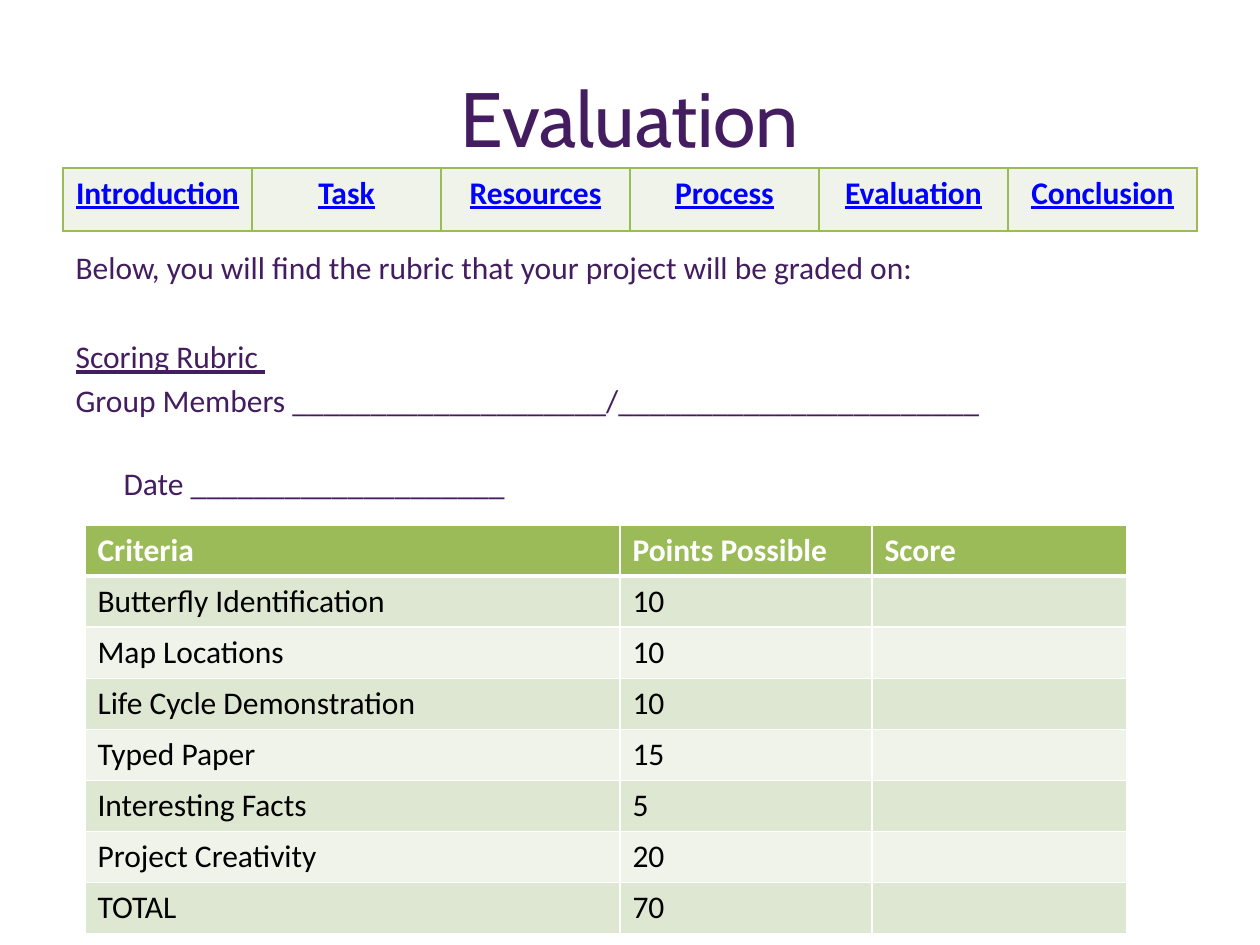
from dataclasses import dataclass

from lxml.etree import SubElement
from pptx import Presentation
from pptx.dml.color import RGBColor
from pptx.enum.text import MSO_ANCHOR, MSO_AUTO_SIZE, PP_ALIGN
from pptx.oxml.ns import qn
from pptx.util import Emu, Pt

EMU_PER_INCH = 914400
PX_PER_INCH = 126
COLORS = {
    "purple": "441D61",
    "link": "0000FF",
    "green": "9BBB59",
    "band": "DEE7D1",
    "pale": "EFF3EA",
    "white": "FFFFFF",
    "black": "000000",
}


@dataclass
class TextStyle:
    color: str
    size: int = 18
    font: str = "Calibri"
    bold: bool = False
    underline: bool = False
    align: PP_ALIGN = PP_ALIGN.LEFT


@dataclass
class BodyLine:
    text: str
    space_before: float = 3.6
    indent: int = 0
    underline: bool = False


@dataclass
class CellLook:
    fill: str
    border: str
    style: TextStyle
    top: int = 1
    bottom: int = 1


@dataclass
class TableBox:
    left: int
    top: int
    columns: list[int]
    row_height: int


BODY_LINES = [
    BodyLine("Below, you will find the rubric that your project will be graded on:", 0),
    BodyLine("Scoring Rubric ", 29.2, underline=True),
    BodyLine("Group Members " + "_" * 20 + "/" + "_" * 23),
    BodyLine("Date " + "_" * 20, 25.6, indent=48),
]
SECTIONS = ["Introduction", "Task", "Resources", "Process", "Evaluation", "Conclusion"]
RUBRIC = [
    ["Criteria", "Points Possible", "Score"],
    ["Butterfly Identification", "10", ""],
    ["Map Locations", "10", ""],
    ["Life Cycle Demonstration", "10", ""],
    ["Typed Paper", "15", ""],
    ["Interesting Facts", "5", ""],
    ["Project Creativity", "20", ""],
    ["TOTAL", "70", ""],
]


def px(length: int) -> Emu:
    return Emu(round(length * EMU_PER_INCH / PX_PER_INCH))


def color(name: str) -> RGBColor:
    return RGBColor.from_string(COLORS[name])


def place(shape, left: int, top: int, width: int, height: int) -> None:
    shape.left, shape.top = px(left), px(top)
    shape.width, shape.height = px(width), px(height)


def format_paragraph(paragraph, style: TextStyle) -> None:
    paragraph.alignment = style.align
    for run in paragraph.runs:
        run.font.name = style.font
        run.font.size = Pt(style.size)
        run.font.bold = style.bold
        run.font.underline = style.underline
        run.font.color.rgb = color(style.color)


def fill_title(title) -> None:
    place(title, 63, 38, 1134, 157)
    title.text_frame.text = "Evaluation"
    title.text_frame.auto_size = MSO_AUTO_SIZE.NONE
    title.text_frame.vertical_anchor = MSO_ANCHOR.MIDDLE
    format_paragraph(
        title.text_frame.paragraphs[0],
        TextStyle("purple", 44, "Cabin", align=PP_ALIGN.CENTER),
    )


def fill_body(body, lines: list[BodyLine]) -> None:
    place(body, 63, 242, 1134, 624)
    frame = body.text_frame
    frame.text = "\n".join(line.text for line in lines)
    frame.auto_size = MSO_AUTO_SIZE.NONE
    for paragraph, line in zip(frame.paragraphs, lines):
        properties = paragraph._p.get_or_add_pPr()
        properties.set("marL", str(px(line.indent)))
        properties.set("indent", "0")
        SubElement(properties, qn("a:buNone"))
        paragraph.space_before = Pt(line.space_before)
        format_paragraph(paragraph, TextStyle("purple", underline=line.underline))


def add_borders(cell, look: CellLook) -> None:
    properties = cell._tc.get_or_add_tcPr()
    widths = {"lnL": 1, "lnR": 1, "lnT": look.top, "lnB": look.bottom}
    for side, width in widths.items():
        line = SubElement(properties, qn(f"a:{side}"), w=str(Pt(width)))
        fill = SubElement(line, qn("a:solidFill"))
        SubElement(fill, qn("a:srgbClr"), val=COLORS[look.border])


def add_grid(slide, box: TableBox, rows: list[list[str]], looks: list[CellLook]) -> None:
    table = slide.shapes.add_table(
        len(rows), len(box.columns), px(box.left), px(box.top),
        px(sum(box.columns)), px(box.row_height * len(rows)),
    ).table
    for column, width in zip(table.columns, box.columns):
        column.width = px(width)
    for row, texts, look in zip(table.rows, rows, looks):
        row.height = px(box.row_height)
        for cell, text in zip(row.cells, texts):
            add_borders(cell, look)
            cell.fill.solid()
            cell.fill.fore_color.rgb = color(look.fill)
            cell.text_frame.text = text
            format_paragraph(cell.text_frame.paragraphs[0], look.style)


def rubric_looks(row_count: int) -> list[CellLook]:
    header = CellLook("green", "white", TextStyle("white", bold=True), bottom=3)
    body_rows = [
        CellLook(
            "band" if row % 2 else "pale", "white", TextStyle("black"),
            top=3 if row == 1 else 1,
        )
        for row in range(1, row_count)
    ]
    return [header, *body_rows]


def main() -> None:
    presentation = Presentation()
    presentation.slide_width, presentation.slide_height = px(1260), px(945)
    slide = presentation.slides.add_slide(presentation.slide_layouts[1])
    fill_title(slide.shapes.title)
    fill_body(slide.placeholders[1], BODY_LINES)
    link_style = TextStyle("link", bold=True, underline=True, align=PP_ALIGN.CENTER)
    navigation_box = TableBox(63, 168, [189] * len(SECTIONS), 63)
    add_grid(slide, navigation_box, [SECTIONS], [CellLook("pale", "green", link_style)])
    rubric_box = TableBox(85, 525, [535, 252, 255], 51)
    add_grid(slide, rubric_box, RUBRIC, rubric_looks(len(RUBRIC)))
    presentation.save("out.pptx")


if __name__ == "__main__":
    main()
